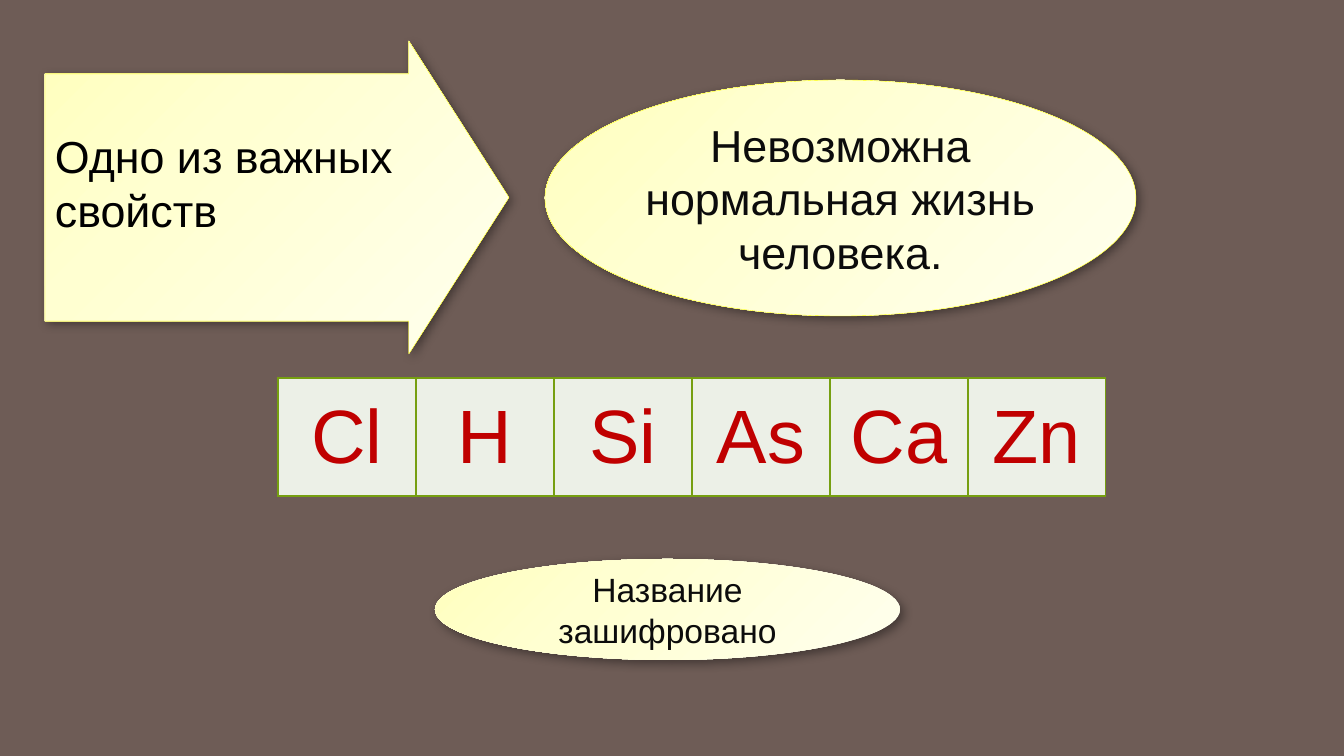
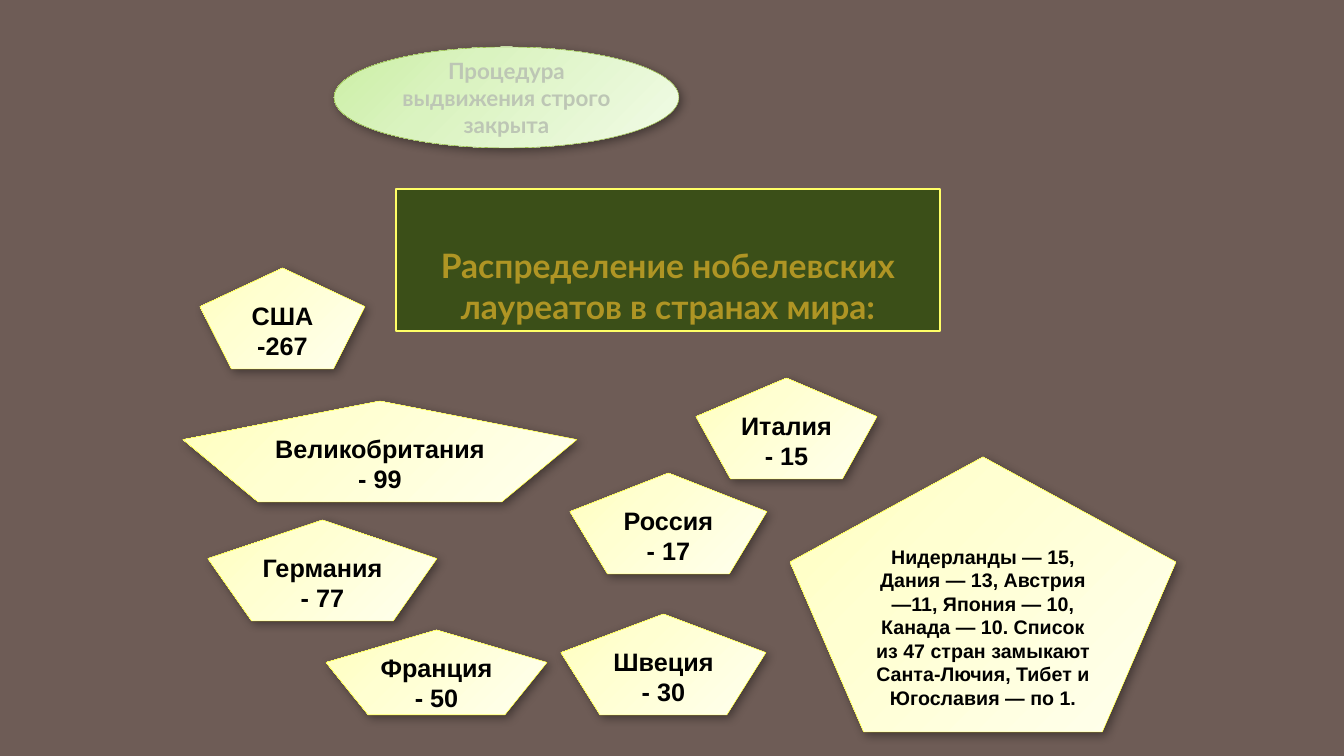
from lxml.etree import SubElement
from pptx import Presentation
from pptx.dml.color import RGBColor
from pptx.enum.shapes import MSO_SHAPE
from pptx.enum.text import MSO_ANCHOR, PP_ALIGN
from pptx.oxml.ns import qn
from pptx.util import Pt

EMU_PER_PX = 914400 / 100.8
SLIDE_BOX = (0, 0, 1344, 756)

BACKGROUND = "6E5C56"
OLIVE = "769F11"
YELLOW = "FFFF00"
CREAM_GRADIENT = ((0, "FFFFBD"), (35, "FFFFD1"), (100, "FFFFEE"))
GREEN_GRADIENT = ((0, "CBEFA4"), (35, "DAF3C0"), (100, "F1FBE6"))

CAPTION = {"name": "Arial", "size": Pt(24), "color": "0C0C0C"}
STATEMENT = {**CAPTION, "size": Pt(32)}
PROPERTY = {**STATEMENT, "color": "000000"}
SYMBOL = {"name": "Arial", "size": Pt(54), "color": "C00000"}
COUNTRY = {"name": "Arial", "size": Pt(18), "bold": True, "color": "000000"}
COUNTRY_LIST = {**COUNTRY, "size": Pt(14)}
HEADING = {"name": "Lato", "size": Pt(24), "bold": True, "color": "AF9524"}
PROCEDURE = {"name": "Lato", "size": Pt(16), "bold": True, "color": "BDC6B5"}


def px(length):
    return round(length * EMU_PER_PX)


def rgb(value):
    return RGBColor.from_string(value)


def place(box, left, top, width, height):
    return [px(n) for n in (box[0] + left, box[1] + top, width, height)]


def add_node(parent, tag, **attributes):
    return SubElement(parent, qn(tag), {k: str(v) for k, v in attributes.items()})


def set_font(font, style):
    for name, value in style.items():
        if name == "color":
            font.color.rgb = rgb(value)
        else:
            setattr(font, name, value)


def write(frame, text, style, align=PP_ALIGN.CENTER, anchor=MSO_ANCHOR.MIDDLE):
    frame.word_wrap = True
    frame.vertical_anchor = anchor
    frame.text = text
    for paragraph in frame.paragraphs:
        paragraph.alignment = align
        for run in paragraph.runs:
            set_font(run.font, style)


def set_line(shape, color, width):
    if color is None:
        shape.line.fill.background()
    else:
        shape.line.color.rgb = rgb(color)
        shape.line.width = Pt(width)


def set_gradient(shape, stops):
    properties = shape._element.spPr
    gradient = add_node(properties, "a:gradFill", rotWithShape=1)
    stop_list = add_node(gradient, "a:gsLst")
    for position, color in stops:
        stop = add_node(stop_list, "a:gs", pos=position * 1000)
        add_node(stop, "a:srgbClr", val=color)
    circle = add_node(gradient, "a:path", path="circle")
    add_node(circle, "a:fillToRect", r=100000, b=100000)
    properties.find(qn("a:prstGeom")).addnext(gradient)


def set_shadow(shape):
    shape.shadow.inherit = False
    effects = shape._element.spPr.find(qn("a:effectLst"))
    shadow = add_node(effects, "a:outerShdw", blurRad=Pt(7), dist=Pt(3),
                      dir=45 * 60000, algn="tl", rotWithShape=0)
    color = add_node(shadow, "a:srgbClr", val="000000")
    add_node(color, "a:alpha", val=38000)


def add_badge(slide, kind, position, text, style, stops=CREAM_GRADIENT,
              outline=YELLOW, align=PP_ALIGN.CENTER):
    badge = slide.shapes.add_shape(kind, *position)
    set_gradient(badge, stops)
    set_line(badge, outline, 0.25)
    set_shadow(badge)
    write(badge.text_frame, text, style, align)
    return badge


def set_cell_borders(cell, color, width):
    properties = cell._tc.get_or_add_tcPr()
    for index, side in enumerate(("a:lnL", "a:lnR", "a:lnT", "a:lnB")):
        border = add_node(properties, side, w=Pt(width))
        add_node(add_node(border, "a:solidFill"), "a:srgbClr", val=color)
        properties.insert(index, border)


def add_symbol_table(slide, box):
    symbols = ("Cl", "H", "Si", "As", "Ca", "Zn")
    frame = slide.shapes.add_table(1, len(symbols), *place(box, 0, 0, *box[2:]))
    table = frame.table
    table.first_row = table.horz_banding = False
    for column, symbol in enumerate(symbols):
        table.columns[column].width = px(box[2] / len(symbols))
        cell = table.cell(0, column)
        cell.fill.solid()
        cell.fill.fore_color.rgb = rgb("ECF0E7")
        write(cell.text_frame, symbol, SYMBOL)
        cell.vertical_anchor = MSO_ANCHOR.MIDDLE
        set_cell_borders(cell, OLIVE, 1)


def build_cipher_slide(slide, box):
    add_badge(slide, MSO_SHAPE.OVAL, place(box, 435, 559, 465, 101),
              "Название зашифровано", CAPTION, outline=None)
    add_badge(slide, MSO_SHAPE.OVAL, place(box, 545, 80, 591, 236),
              "Невозможна нормальная жизнь человека.", STATEMENT)
    add_symbol_table(slide, (box[0] + 278, box[1] + 378, 828, 118))
    arrow = add_badge(slide, MSO_SHAPE.RIGHT_ARROW, place(box, 45, 41, 464, 313),
                      "Одно из важных\nсвойств", PROPERTY, align=PP_ALIGN.LEFT)
    arrow.adjustments[0] = 0.79
    arrow.adjustments[1] = 0.32
    arrow.text_frame.margin_bottom = px(34)


def add_heading(slide, box):
    heading = slide.shapes.add_shape(MSO_SHAPE.RECTANGLE, *place(box, 0, 0, *box[2:]))
    heading.shadow.inherit = False
    heading.fill.solid()
    heading.fill.fore_color.rgb = rgb("3B4F18")
    set_line(heading, "FFFF66", 1.5)
    write(heading.text_frame, "Распределение нобелевских лауреатов в странах мира:",
          HEADING, anchor=MSO_ANCHOR.BOTTOM)


def add_countries(slide, box):
    countries = (
        ("США\n-267", 17, 0, 165, 101),
        ("Великобритания\n- 99", 0, 133, 394, 101),
        ("Франция - 50", 143, 362, 221, 85),
        ("Германия - 77", 25, 252, 229, 101),
        ("Швеция - 30", 378, 346, 205, 101),
        ("Италия - 15", 513, 110, 181, 101),
        ("Россия - 17", 387, 205, 197, 101),
    )
    for text, *position in countries:
        add_badge(slide, MSO_SHAPE.REGULAR_PENTAGON, place(box, *position), text, COUNTRY)
    add_badge(slide, MSO_SHAPE.REGULAR_PENTAGON, place(box, 607, 189, 386, 275),
              "Нидерланды — 15, Дания — 13, Австрия —11, Япония — 10, "
              "Канада — 10. Список из 47 стран замыкают Санта-Лючия, "
              "Тибет и Югославия — по 1.", COUNTRY_LIST)


def build_laureates_slide(slide, box):
    add_heading(slide, (box[0] + 396, box[1] + 189, 544, 142))
    add_badge(slide, MSO_SHAPE.OVAL, place(box, 334, 47, 345, 101),
              "Процедура выдвижения строго закрыта", PROCEDURE,
              stops=GREEN_GRADIENT, outline=OLIVE)
    add_countries(slide, (box[0] + 183, box[1] + 268, 993, 464))


def main():
    deck = Presentation()
    deck.slide_width, deck.slide_height = px(SLIDE_BOX[2]), px(SLIDE_BOX[3])
    backdrop = deck.slide_master.background.fill
    backdrop.solid()
    backdrop.fore_color.rgb = rgb(BACKGROUND)
    for build in (build_cipher_slide, build_laureates_slide):
        build(deck.slides.add_slide(deck.slide_layouts[6]), SLIDE_BOX)
    deck.save("out.pptx")


if __name__ == "__main__":
    main()
